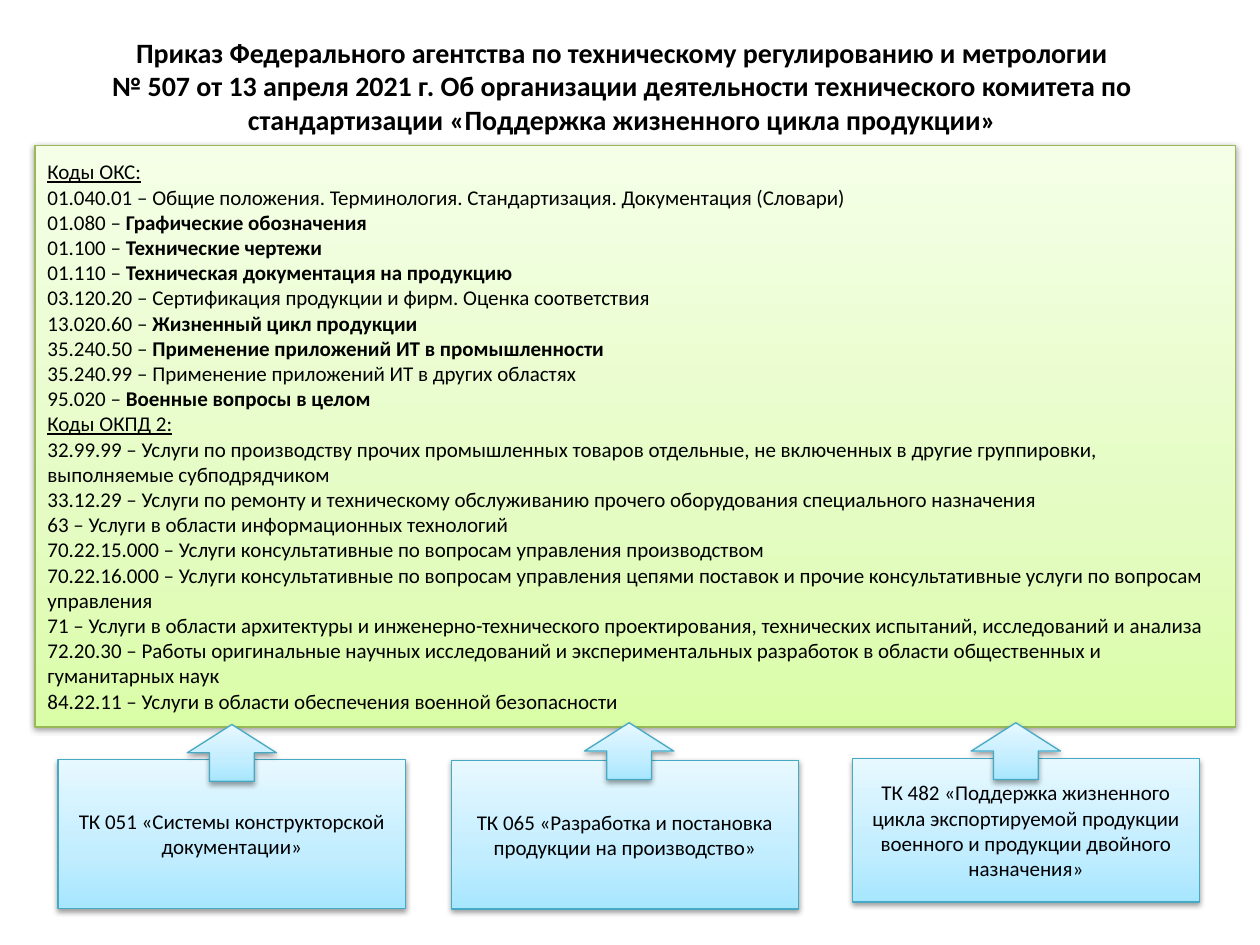
from copy import deepcopy

from lxml import etree
from pptx import Presentation
from pptx import util as u
from pptx.dml.color import RGBColor
from pptx.enum import shapes, text
from pptx.oxml import ns

Pt = u.Pt
BLACK = RGBColor(0x00, 0x00, 0x00)
BLUE_LINE = RGBColor(0x46, 0xAA, 0xC5)
GREEN_LINE = RGBColor(0x98, 0xB9, 0x55)
BLUES = [RGBColor(0xA7, 0xE6, 0xFF), RGBColor(0xC1, 0xED, 0xFF), RGBColor(0xE7, 0xF8, 0xFF)]
GREENS = [RGBColor(0xDA, 0xFD, 0xA7), RGBColor(0xE4, 0xFC, 0xC2), RGBColor(0xF5, 0xFF, 0xE7)]
STOPS = [0, 0.35, 1]
SHADOW = f"""<a:outerShdw xmlns:a="{ns.nsdecls('a').split('"')[1]}" blurRad="40000" dist="20000"
 dir="5400000" rotWithShape="0"><a:srgbClr val="000000"><a:alpha val="38000"/></a:srgbClr></a:outerShdw>"""
BODY = {"name": "Calibri", "size": Pt(12)}
HEADING = {"name": "Calibri", "size": Pt(16), "bold": True}


def add_run(paragraph, wording, style):
    run = paragraph.add_run()
    run.text = wording
    for key, value in style.items():
        setattr(run.font, key, value)
    run.font.color.rgb = BLACK


def add_panel(kind, left, top, width, height, colours, line):
    panel = slide.shapes.add_shape(kind, Pt(left), Pt(top), Pt(width), Pt(height))
    panel.fill.gradient()
    panel.fill.gradient_angle = 90
    stop_list = panel._element.spPr.find(".//" + ns.qn("a:gsLst"))
    stop_list.append(deepcopy(stop_list[-1]))
    for stop, position, colour in zip(panel.fill.gradient_stops, STOPS, colours):
        stop.position = position
        stop.color.rgb = colour
    panel.line.color.rgb = line
    panel.line.width = Pt(0.75)
    panel.shadow.inherit = False
    panel._element.spPr.find(ns.qn("a:effectLst")).append(etree.fromstring(SHADOW))
    panel.text_frame.vertical_anchor = text.MSO_ANCHOR.MIDDLE
    return panel


deck = Presentation()
deck.slide_width, deck.slide_height = Pt(720), Pt(540)
slide = deck.slides.add_slide(deck.slide_layouts[5])

order = slide.shapes.title
for key, value in {"left": 31.5, "top": 15, "width": 648, "height": 68}.items():
    setattr(order, key, Pt(value))
order.text_frame.auto_size = text.MSO_AUTO_SIZE.NONE
order.text_frame.vertical_anchor = text.MSO_ANCHOR.MIDDLE
order_lines = order.text_frame.paragraphs[0]
order_lines.alignment = text.PP_ALIGN.CENTER
add_run(order_lines, "Приказ Федерального агентства по техническому регулированию и метрологии", HEADING)
order_lines.add_line_break()
add_run(order_lines, "№ 507 от 13 апреля 2021 г. Об организации деятельности технического комитета по "
        "стандартизации «Поддержка жизненного цикла продукции»", HEADING)

UNDERLINED = {"underline": True}
BOLD = {"bold": True}
codes = [
    ("", "Коды ОКС:", UNDERLINED),
    ("01.040.01", "Общие положения. Терминология. Стандартизация. Документация (Словари)", {}),
    ("01.080", "Графические обозначения", BOLD),
    ("01.100", "Технические чертежи", BOLD),
    ("01.110", "Техническая документация на продукцию", BOLD),
    ("03.120.20", "Сертификация продукции и фирм. Оценка соответствия", {}),
    ("13.020.60", "Жизненный цикл продукции", BOLD),
    ("35.240.50", "Применение приложений ИТ в промышленности", BOLD),
    ("35.240.99", "Применение приложений ИТ в других областях", {}),
    ("95.020", "Военные вопросы в целом", BOLD),
    ("", "Коды ОКПД 2:", UNDERLINED),
    ("32.99.99", "Услуги по производству прочих промышленных товаров отдельные, "
     "не включенных в другие группировки, выполняемые субподрядчиком", {}),
    ("33.12.29", "Услуги по ремонту и техническому обслуживанию прочего оборудования "
     "специального назначения", {}),
    ("63", "Услуги в области информационных технологий", {}),
    ("70.22.15.000", "Услуги консультативные по вопросам управления производством", {}),
    ("70.22.16.000", "Услуги консультативные по вопросам управления цепями поставок "
     "и прочие консультативные услуги по вопросам управления", {}),
    ("71", "Услуги в области архитектуры и инженерно-технического проектирования, "
     "технических испытаний, исследований и анализа", {}),
    ("72.20.30", "Работы оригинальные научных исследований и экспериментальных разработок "
     "в области общественных и гуманитарных наук", {}),
    ("84.22.11", "Услуги в области обеспечения военной безопасности", {}),
]
code_panel = add_panel(shapes.MSO_SHAPE.RECTANGLE, 20, 83, 686, 332.5, GREENS, GREEN_LINE)
for index, (code, subject, style) in enumerate(codes):
    frame = code_panel.text_frame
    entry = frame.add_paragraph() if index else frame.paragraphs[0]
    entry.alignment = text.PP_ALIGN.LEFT
    if code:
        add_run(entry, f"{code} – ", BODY)
    add_run(entry, subject, BODY | style)

committees = [
    ("ТК 051 «Системы конструкторской документации»", 33.2, 434, 85, 107, 414),
    ("ТК 065 «Разработка и постановка продукции на производство»", 257.8, 434.5, 85, 334, 413),
    ("ТК 482 «Поддержка жизненного цикла экспортируемой продукции военного и продукции "
     "двойного назначения»", 487, 433.5, 82, 555, 413),
]
for committee, left, top, height, arrow_left, arrow_top in committees:
    box = add_panel(shapes.MSO_SHAPE.RECTANGLE, left, top, 198.5, height, BLUES, BLUE_LINE)
    label = box.text_frame.paragraphs[0]
    label.alignment = text.PP_ALIGN.CENTER
    add_run(label, committee, BODY)
    add_panel(shapes.MSO_SHAPE.UP_ARROW, arrow_left, arrow_top, 51, 32.4, BLUES, BLUE_LINE)

deck.save("out.pptx")
